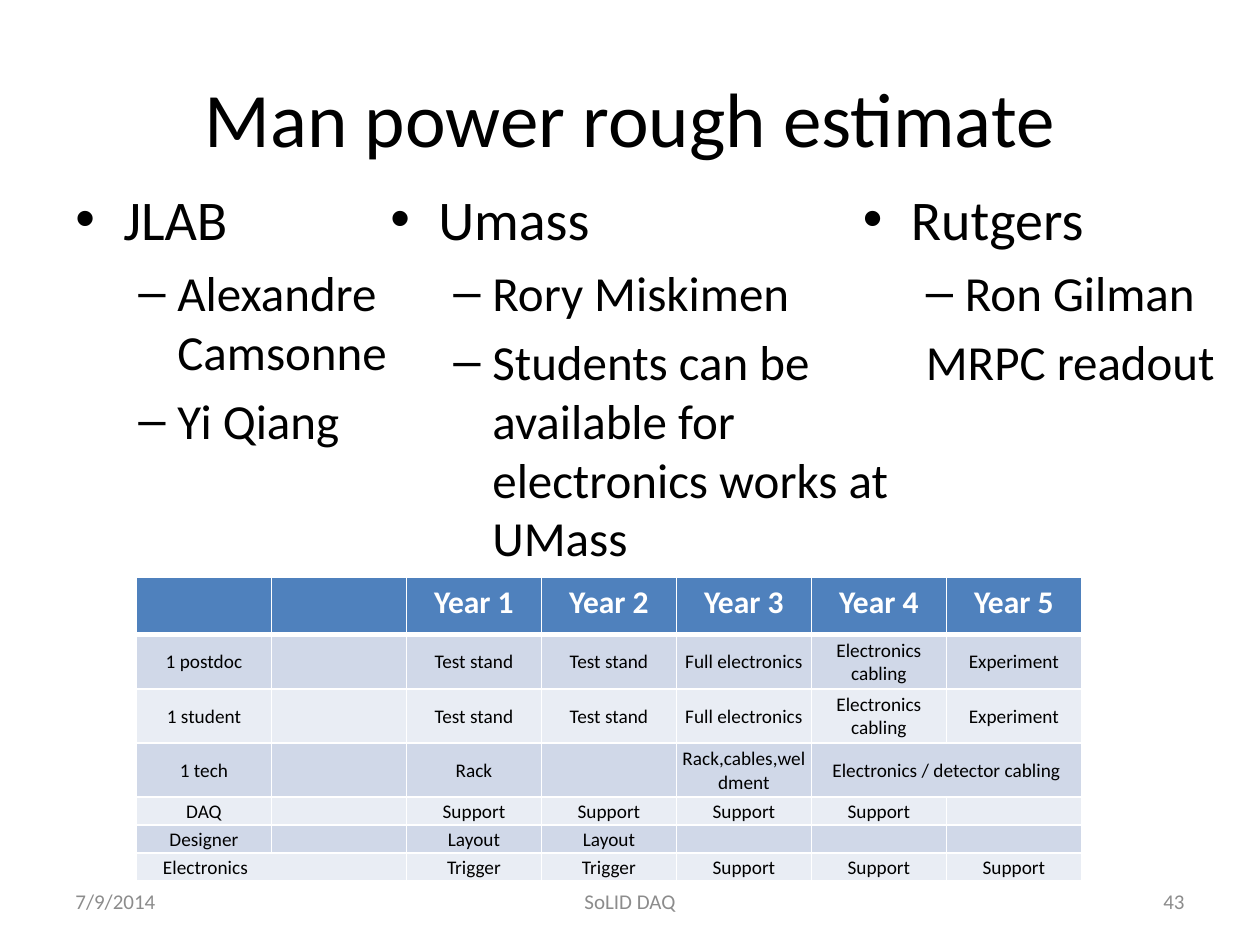
from dataclasses import dataclass

from lxml.etree import SubElement
from pptx import Presentation
from pptx.dml.color import RGBColor
from pptx.enum.text import MSO_ANCHOR, PP_ALIGN
from pptx.oxml.ns import qn
from pptx.util import Inches, Pt


@dataclass(frozen=True)
class Theme:
    font: str = "Calibri"
    ink: str = "000000"
    paper: str = "FFFFFF"
    muted: str = "8C8C8C"
    header: str = "4F81BD"
    bands: tuple = ("D0D8E8", "E9EDF4")
    title: int = 44
    levels: tuple = (32, 28)
    head: int = 18
    cell: int = 11
    footer: int = 12


LEFT, CENTER, RIGHT = PP_ALIGN.LEFT, PP_ALIGN.CENTER, PP_ALIGN.RIGHT
MIDDLE, TOP = MSO_ANCHOR.MIDDLE, MSO_ANCHOR.TOP
BULLETS = {"•": (0.38, -0.38), "–": (0.81, -0.31), "": (0.5, 0)}


class Deck:
    COLS, ROWS = 120, 90

    def __init__(self, theme):
        self.theme = theme
        self.prs = Presentation()
        self.prs.slide_width, self.prs.slide_height = Inches(10), Inches(7.5)
        self.s = self.prs.slides.add_slide(self.prs.slide_layouts[6])

    def x(self, cols):
        return round(self.prs.slide_width * cols / self.COLS)

    def y(self, rows):
        return round(self.prs.slide_height * rows / self.ROWS)

    def box(self, col, row, cols, rows, anchor):
        sp = self.s.shapes.add_textbox(self.x(col), self.y(row), self.x(cols), self.y(rows))
        tf = sp.text_frame
        tf.word_wrap = True
        tf.vertical_anchor = anchor
        return tf

    def run(self, p, text, size, color, bold=False):
        r = p.add_run()
        r.text = text
        r.font.name = self.theme.font
        r.font.size = Pt(size)
        r.font.bold = bold
        r.font.color.rgb = RGBColor.from_string(color)

    def line(self, text, area, size, color, align):
        p = self.box(*area, MIDDLE).paragraphs[0]
        p.alignment = align
        self.run(p, text, size, color)

    def bullets(self, area, items):
        tf = self.box(*area, TOP)
        for i, (mark, text) in enumerate(items):
            p = tf.add_paragraph() if i else tf.paragraphs[0]
            p.level = 0 if mark == "•" else 1
            size = self.theme.levels[p.level]
            p.space_before = Pt(round(size * 0.21, 1))
            margin, indent = BULLETS[mark]
            pPr = p._p.get_or_add_pPr()
            pPr.set("marL", str(Inches(margin)))
            pPr.set("indent", str(Inches(indent)))
            if mark:
                SubElement(pPr, qn("a:buFont"), typeface="Arial")
                SubElement(pPr, qn("a:buChar"), char=mark)
            else:
                SubElement(pPr, qn("a:buNone"))
            self.run(p, text, size, self.theme.ink)

    def borders(self, cell, top, bottom):
        tcPr = cell._tc.get_or_add_tcPr()
        for side, width in (("L", 1), ("R", 1), ("T", top), ("B", bottom)):
            ln = SubElement(tcPr, qn(f"a:ln{side}"), w=str(Pt(width)))
            SubElement(SubElement(ln, qn("a:solidFill")), qn("a:srgbClr"), val=self.theme.paper)

    def cell(self, cell, text, row):
        t = self.theme
        is_head = row == 0
        size = t.head if is_head else t.cell
        self.borders(cell, 3 if row == 1 else 1, 3 if is_head else 1)
        cell.fill.solid()
        fill = t.header if is_head else t.bands[(row - 1) % 2]
        cell.fill.fore_color.rgb = RGBColor.from_string(fill)
        if not is_head:
            cell.vertical_anchor = MIDDLE
            cell.margin_left = cell.margin_right = cell.margin_top = Inches(0.01)
            cell.margin_bottom = 0
        p = cell.text_frame.paragraphs[0]
        p.alignment = CENTER
        if text:
            self.run(p, text, size, t.paper if is_head else t.ink, is_head)
        else:
            SubElement(p._p, qn("a:endParaRPr"), sz=str(size * 100))

    def table(self, col, row, cols, heights, data):
        frame = self.s.shapes.add_table(
            len(data), len(data[0]), self.x(col), self.y(row), self.x(cols), self.y(sum(heights)))
        table = frame.table
        for column in table.columns:
            column.width = self.x(cols / len(data[0]))
        for i, (height, texts) in enumerate(zip(heights, data)):
            table.rows[i].height = self.y(height)
            for j, text in enumerate(texts):
                self.cell(table.cell(i, j), text, i)
        return table


def main():
    theme = Theme()
    deck = Deck(theme)
    deck.line("Man power rough estimate", (6, 3.6, 108, 15), theme.title, theme.ink, CENTER)

    groups = {
        6: [("•", "JLAB"), ("–", "Alexandre Camsonne"), ("–", "Yi Qiang")],
        36: [("•", "Umass"), ("–", "Rory Miskimen"),
             ("–", "Students can be available for electronics works at UMass")],
        81: [("•", "Rutgers"), ("–", "Ron Gilman"), ("", "MRPC readout")],
    }
    for col, items in groups.items():
        deck.bullets((col, 17, 52, 59.4), items)

    work = ["", "Test stand", "Test stand", "Full electronics", "Electronics cabling", "Experiment"]
    plan = [
        ["", ""] + [f"Year {n}" for n in range(1, 6)],
        ["1 postdoc"] + work,
        ["1 student"] + work,
        ["1 tech", "", "Rack", "", "Rack,cables,weldment", "Electronics / detector cabling", ""],
        ["DAQ", ""] + ["Support"] * 4 + [""],
        ["Designer", "", "Layout", "Layout", "", "", ""],
        ["Electronics", "", "Trigger", "Trigger"] + ["Support"] * 3,
    ]
    table = deck.table(13, 55, 90, [5.45] + [5.15] * 3 + [2.67] * 3, plan)
    table.cell(3, 5).merge(table.cell(3, 6))
    electronics = table.cell(6, 0)
    electronics.merge(table.cell(6, 1))
    electronics.margin_left = Inches(0.21)
    electronics.text_frame.paragraphs[0].alignment = LEFT

    footers = [("7/9/2014", 6, 28, LEFT), ("SoLID DAQ", 41, 38, CENTER), ("43", 86, 28, RIGHT)]
    for text, col, cols, align in footers:
        deck.line(text, (col, 83.4, cols, 4.8), theme.footer, theme.muted, align)
    deck.prs.save("out.pptx")


if __name__ == "__main__":
    main()
